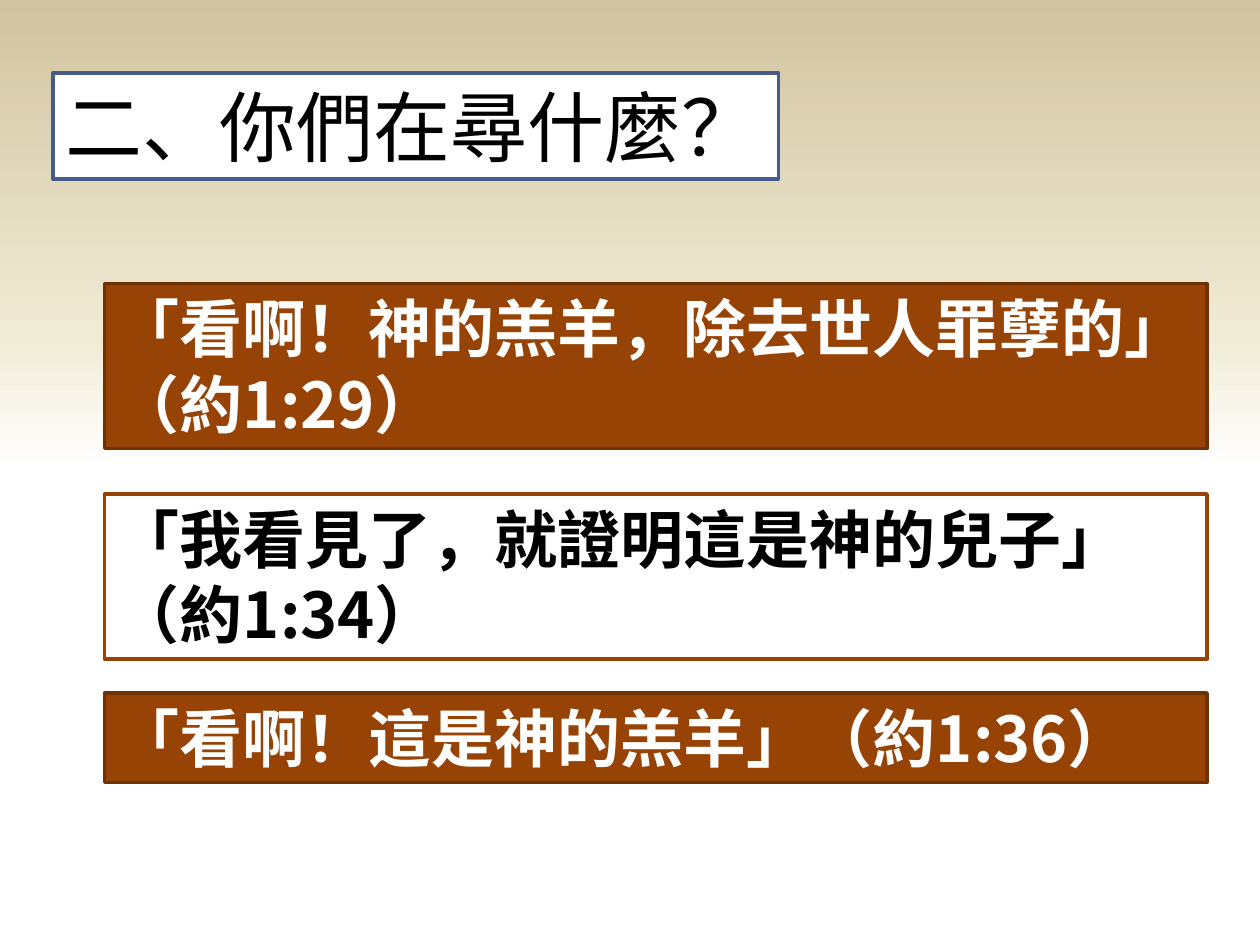
from copy import deepcopy

from pptx import Presentation
from pptx.dml.color import RGBColor
from pptx.enum.shapes import MSO_SHAPE
from pptx.enum.text import MSO_ANCHOR, MSO_AUTO_SIZE, PP_ALIGN
from pptx.oxml.ns import qn
from pptx.util import Inches, Pt

RECTANGLE = MSO_SHAPE.RECTANGLE
TOP, MIDDLE = MSO_ANCHOR.TOP, MSO_ANCHOR.MIDDLE
FIT_SHAPE = MSO_AUTO_SIZE.SHAPE_TO_FIT_TEXT
LEFT = PP_ALIGN.LEFT
TITLE_ONLY = 5

COLORS = {
    "white": "FFFFFF",
    "black": "000000",
    "cream": "F0EBD5",
    "sand": "D1C39F",
    "blue": "475A8D",
    "brown": "964305",
    "dark_brown": "6F3204",
}
CJK_FONT = "Noto Sans CJK SC"
TITLE_FONT = "Roboto"


def rgb(name):
    return RGBColor.from_string(COLORS[name])


def paint_background(slide):
    fill = slide.background.fill
    fill.gradient()
    fill.gradient_angle = 90
    stop_list = slide.element.find(".//" + qn("a:gsLst"))
    stop_list.append(deepcopy(stop_list[-1]))
    stops = [(0.5, "white"), (0.65, "cream"), (1, "sand")]
    for stop, (position, color) in zip(fill.gradient_stops, stops):
        stop.position = position
        stop.color.rgb = rgb(color)


def style_box(shape, fill, line):
    shape.fill.solid()
    shape.fill.fore_color.rgb = rgb(fill)
    shape.line.color.rgb = rgb(line)
    shape.line.width = Pt(2)


def write_text(shape, text, size, color, font, bold, anchor, wrap):
    frame = shape.text_frame
    frame.word_wrap = wrap
    frame.auto_size = FIT_SHAPE
    frame.vertical_anchor = anchor
    paragraph = frame.paragraphs[0]
    paragraph.alignment = LEFT
    run = paragraph.add_run()
    run.text = text
    run.font.size = Pt(size)
    run.font.bold = bold
    run.font.name = font
    run.font.color.rgb = rgb(color)
    east_asian = run.font._element.makeelement(qn("a:ea"), {"typeface": CJK_FONT})
    run.font._element.find(qn("a:latin")).addnext(east_asian)


def place_title(slide, text, left, top, width, height):
    title = slide.shapes.title
    title.left, title.top, title.width, title.height = left, top, width, height
    style_box(title, "white", "blue")
    write_text(title, text, 44, "black", TITLE_FONT, False, MIDDLE, False)


def add_verse(slide, text, colors, left, top, width, height):
    fill, line, text_color = colors
    verse = slide.shapes.add_shape(RECTANGLE, left, top, width, height)
    verse.shadow.inherit = False
    style_box(verse, fill, line)
    write_text(verse, text, 36, text_color, CJK_FONT, True, TOP, True)


def main():
    prs = Presentation()
    prs.slide_width, prs.slide_height = Inches(10), Inches(7.5)
    slide = prs.slides.add_slide(prs.slide_layouts[TITLE_ONLY])
    paint_background(slide)
    place_title(slide, "二、你們在尋什麼？",
                Inches(0.42), Inches(0.58), Inches(5.76), Inches(0.84))

    filled = ("brown", "dark_brown", "white")
    outlined = ("white", "brown", "black")
    verses = [
        ("「看啊！神的羔羊，除去世人罪孽的」（約1:29）", filled, 2.25, 1.31),
        ("「我看見了，就證明這是神的兒子」（約1:34）", outlined, 3.92, 1.31),
        ("「看啊！這是神的羔羊」（約1:36）", filled, 5.5, 0.71),
    ]
    for text, colors, top, height in verses:
        add_verse(slide, text, colors,
                  Inches(0.83), Inches(top), Inches(8.75), Inches(height))
    prs.save("out.pptx")


if __name__ == "__main__":
    main()
